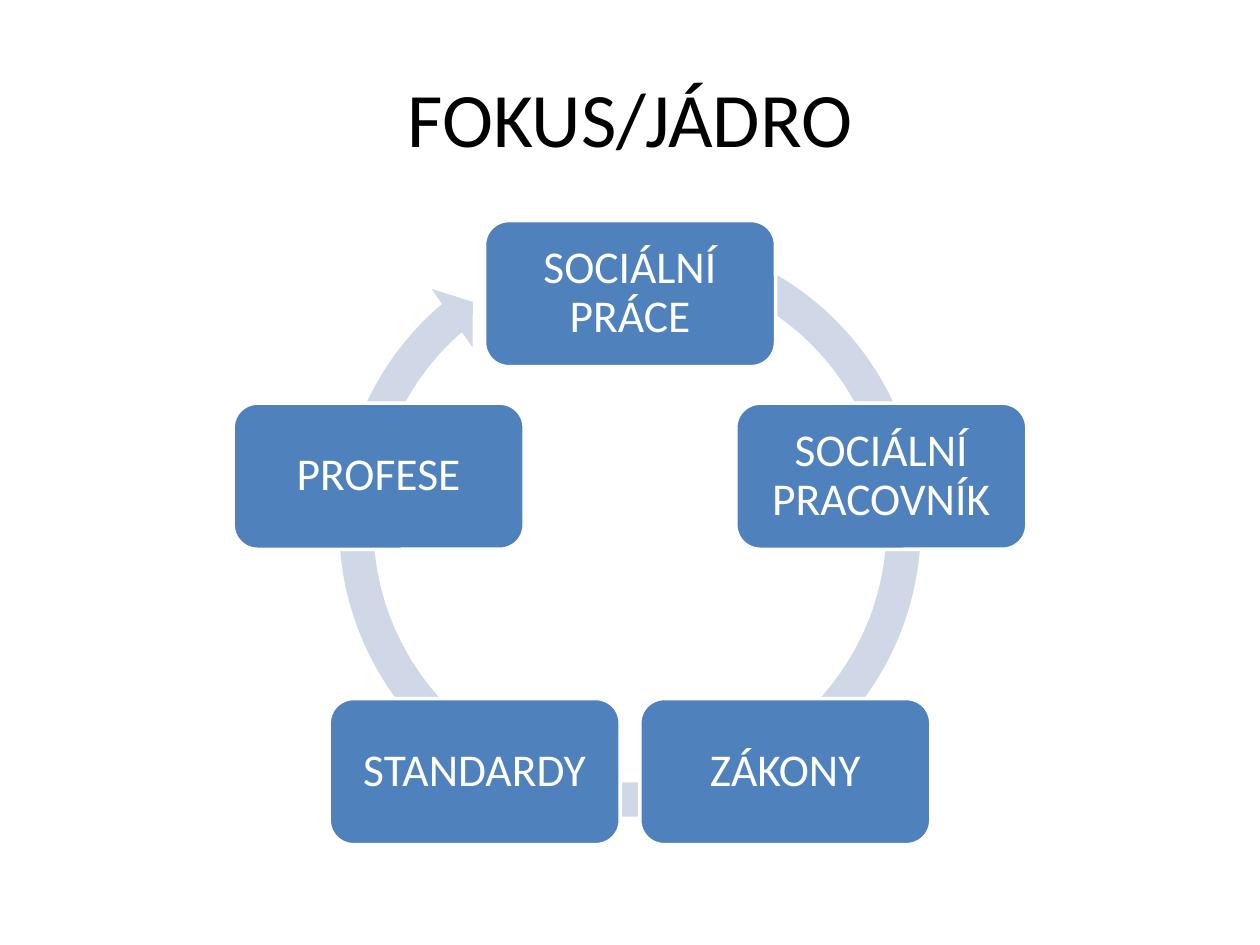
import math

import pptx
import pptx.dml.color
import pptx.enum.shapes
import pptx.enum.text
import pptx.util

Pt = pptx.util.Pt
SHAPE = pptx.enum.shapes.MSO_SHAPE

TITLE = "FOKUS/JÁDRO"
STEPS = ["SOCIÁLNÍ PRÁCE", "SOCIÁLNÍ PRACOVNÍK", "ZÁKONY", "STANDARDY", "PROFESE"]
COLORS = {"title": "000000", "ring": "D0D8E8", "box": "4F81BD", "white": "FFFFFF"}
FONT = "Calibri"

MID_X, MID_Y, RADIUS = 360, 318.8, 151
BOX_W, BOX_H = 166.3, 83.5
RING_TOP, RING_SIZE = 123.8, 353.5
# Band width, head angle, end angle, start angle, head width
RING_ADJ = [5.54 / 100, 3.31, 137.66, 173.92, 5.76 / 100]


def rgb(name):
    return pptx.dml.color.RGBColor.from_string(COLORS[name])


def write(shape, text, size, color, inset, spacing=1.0):
    frame = shape.text_frame
    frame.word_wrap = True
    frame.vertical_anchor = pptx.enum.text.MSO_ANCHOR.MIDDLE
    frame.margin_left = frame.margin_right = Pt(inset)
    frame.margin_top = frame.margin_bottom = Pt(inset)
    para = frame.paragraphs[0]
    para.alignment = pptx.enum.text.PP_ALIGN.CENTER
    para.line_spacing = spacing
    run = para.add_run()
    run.text = text
    run.font.name = FONT
    run.font.size = Pt(size)
    run.font.color.rgb = rgb(color)


def add_shape(slide, kind, left, top, width, height, fill):
    shape = slide.shapes.add_shape(kind, Pt(left), Pt(top), Pt(width), Pt(height))
    shape.shadow.inherit = False
    shape.fill.solid()
    shape.fill.fore_color.rgb = rgb(fill)
    return shape


def add_ring(slide):
    ring = add_shape(slide, SHAPE.CIRCULAR_ARROW, MID_X - RING_SIZE / 2, RING_TOP,
                     RING_SIZE, RING_SIZE, "ring")
    ring.line.fill.background()
    for i, value in enumerate(RING_ADJ):
        ring.adjustments[i] = value


def add_steps(slide):
    """Space the boxes evenly around the circle, clockwise from the top."""
    for i, text in enumerate(STEPS):
        angle = 2 * math.pi * i / len(STEPS)
        left = MID_X + RADIUS * math.sin(angle) - BOX_W / 2
        top = MID_Y - RADIUS * math.cos(angle) - BOX_H / 2
        box = add_shape(slide, SHAPE.ROUNDED_RECTANGLE, left, top, BOX_W, BOX_H, "box")
        box.line.color.rgb = rgb("white")
        box.line.width = Pt(2)
        write(box, text, 26, "white", 7.8, 0.9)


def main():
    deck = pptx.Presentation()
    deck.slide_width, deck.slide_height = Pt(720), Pt(540)
    slide = deck.slides.add_slide(deck.slide_layouts[6])
    title = slide.shapes.add_textbox(Pt(36), Pt(21.6), Pt(648), Pt(90))
    write(title, TITLE, 44, "title", 3.6)
    add_ring(slide)
    add_steps(slide)
    deck.save("out.pptx")


if __name__ == "__main__":
    main()
